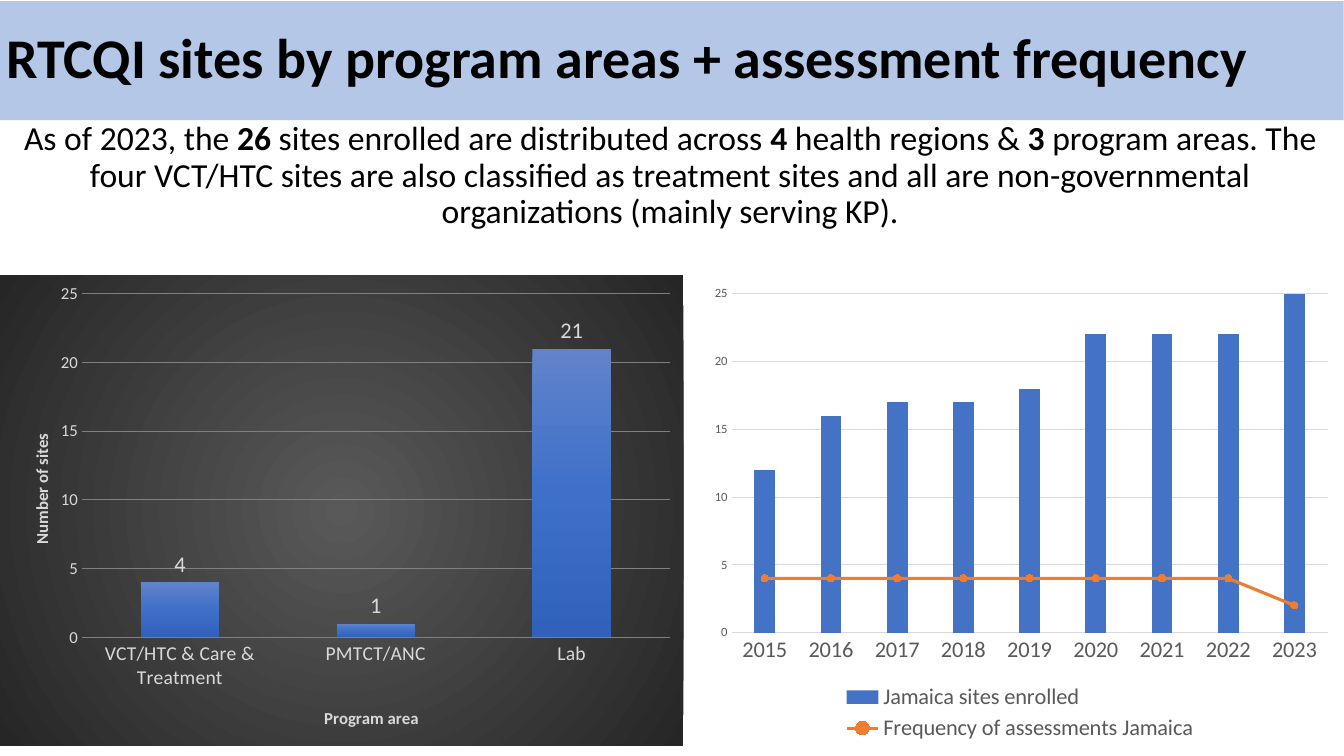
from lxml import etree
from pptx import Presentation
from pptx.chart.data import CategoryChartData
from pptx.dml.color import RGBColor
from pptx.enum import chart as ch, text as tx
from pptx.oxml import parse_xml
from pptx.oxml.ns import nsdecls, qn
from pptx.util import Cm, Pt

HUES = {"band": "B4C7E7", "ink": "000000", "pale": "D9D9D9", "grid": "808080",
        "gray": "595959", "dark": "262626", "blue": "4472C4", "orange": "ED7D31",
        "top": "6183CB", "mid": "3E70CA", "low": "3062BB"}
RGB = {name: RGBColor.from_string(hue) for name, hue in HUES.items()}


def blend(stops, shade):
    marks = "".join(f'<a:gs pos="{pos * 1000}"><a:srgbClr val="{HUES[name]}"/></a:gs>'
                    for pos, name in stops)
    return parse_xml(f'<a:gradFill {nsdecls("a")} rotWithShape="1"><a:gsLst>{marks}</a:gsLst>'
                     f'{shade}</a:gradFill>')


def place(part, index, **spots):
    for old in part.findall(qn("c:layout")):
        part.remove(old)
    modes = '<c:layoutTarget val="inner"/>' if part.tag == qn("c:plotArea") else ""
    modes += '<c:xMode val="edge"/><c:yMode val="edge"/>'
    sizes = "".join(f'<c:{key} val="{val}"/>' for key, val in spots.items())
    part.insert(index, parse_xml(f'<c:layout {nsdecls("c")}><c:manualLayout>{modes}{sizes}'
                                 '</c:manualLayout></c:layout>'))


deck = Presentation()
deck.slide_width, deck.slide_height = Cm(33.87), Cm(19.05)
slide = deck.slides.add_slide(deck.slide_layouts[5])

title = slide.shapes.title
title.left, title.top, title.width, title.height = Cm(-0.1), Cm(0.03), Cm(33.96), Cm(3)
title.fill.solid()
title.fill.fore_color.rgb = RGB["band"]
title.text_frame.text = "RTCQI sites by program areas + assessment frequency"
title.text_frame.vertical_anchor = tx.MSO_ANCHOR.MIDDLE
head = title.text_frame.paragraphs[0]
head.alignment = tx.PP_ALIGN.LEFT
head.line_spacing = 0.9
font = head.runs[0].font
font.name, font.size, font.bold = "Calibri", Pt(40), True
font.color.rgb = RGB["ink"]

frame = slide.shapes.add_textbox(0, Cm(3), Cm(33.78), Cm(2.94)).text_frame
frame.word_wrap = True
frame.vertical_anchor = tx.MSO_ANCHOR.BOTTOM
para = frame.paragraphs[0]
para.alignment = tx.PP_ALIGN.CENTER
para.line_spacing = 0.9
words = ["As of 2023, the ", "26", " sites enrolled are distributed across ", "4",
         " health regions & ", "3",
         " program areas. The four VCT/HTC sites are also classified as treatment sites "
         "and all are non-governmental organizations (mainly serving KP)."]
for i, word in enumerate(words):
    run = para.add_run()
    run.text = word
    run.font.name, run.font.size, run.font.bold = "Calibri", Pt(24), i % 2 == 1
    run.font.color.rgb = RGB["ink"]

areas = (["VCT/HTC & Care & Treatment", "PMTCT/ANC", "Lab"], {"Series 1": [4, 1, 21]})
years = ([str(year) for year in range(2015, 2024)],
         {"Jamaica sites enrolled": [12, 16, 17, 17, 18, 22, 22, 22, 26],
          "Frequency of assessments Jamaica": [4] * 8 + [2]})
plans = [(areas, 0, 17.22, 150, "pale", 14, 12, "grid", (0.12, 0.04, 0.86, 0.73)),
         (years, 17.63, 16.15, 219, "gray", 16, 9, "pale", (0.05, 0.04, 0.93, 0.72))]
charts = []
for (cats, rows), left, width, gap, hue, big, small, grid, spot in plans:
    data = CategoryChartData()
    data.categories = cats
    for name, vals in rows.items():
        data.add_series(name, vals)
    chart = slide.shapes.add_chart(ch.XL_CHART_TYPE.COLUMN_CLUSTERED, Cm(left), Cm(6.93),
                                   Cm(width), Cm(11.86), data).chart
    chart.has_title = chart.has_legend = False
    chart.font.name, chart.font.size = "Calibri", Pt(10)
    plot = chart.plots[0]
    plot.gap_width, plot.vary_by_categories = gap, False
    for axis, size in ((chart.category_axis, big), (chart.value_axis, small)):
        axis.major_tick_mark = axis.minor_tick_mark = ch.XL_TICK_MARK.NONE
        axis.format.line.fill.background()
        font = axis.tick_labels.font
        font.name, font.size = "Calibri", Pt(size)
        font.color.rgb = RGB[hue]
    value = chart.value_axis
    value.minimum_scale, value.maximum_scale, value.major_unit = 0, 25, 5
    value.major_gridlines.format.line.color.rgb = RGB[grid]
    value.major_gridlines.format.line.width = Pt(0.75)
    place(chart._chartSpace.chart.plotArea, 0, **dict(zip("xywh", spot)))
    charts.append(chart)

sites, trend = charts
for axis, name, x, y in ((sites.category_axis, "Program area", 0.47, 0.91),
                         (sites.value_axis, "Number of sites", 0.04, 0.33)):
    label = axis.axis_title
    label.text_frame.text = name
    font = label.text_frame.paragraphs[0].runs[0].font
    font.name, font.size, font.bold = "Calibri", Pt(12), True
    font.color.rgb = RGB["pale"]
    place(label._element, 1, x=x, y=y)
bars = sites.plots[0].series[0]
bars._element.get_or_add_spPr().append(
    blend([(0, "top"), (50, "mid"), (100, "low")], '<a:lin ang="5400000" scaled="0"/>'))
tags = bars.data_labels
tags.show_value = True
tags.position = ch.XL_LABEL_POSITION.OUTSIDE_END
tags.font.name, tags.font.size = "Calibri", Pt(16)
tags.font.color.rgb = RGB["pale"]
back = parse_xml(f'<c:spPr {nsdecls("c", "a")}><a:ln><a:noFill/></a:ln></c:spPr>')
back.insert(0, blend([(0, "gray"), (100, "dark")], '<a:path path="circle">'
                     '<a:fillToRect l="50000" t="50000" r="50000" b="50000"/></a:path>'))
sites._chartSpace.chart.addnext(back)

base = trend.category_axis.format.line
base.color.rgb = RGB["pale"]
base.width = Pt(0.75)
enrolled, rate = trend.plots[0].series
enrolled.format.fill.solid()
enrolled.format.fill.fore_color.rgb = RGB["blue"]
column = trend._chartSpace.chart.plotArea.find(qn("c:barChart"))
lines = parse_xml(f'<c:lineChart {nsdecls("c")}><c:grouping val="stacked"/>'
                  '<c:varyColors val="0"/></c:lineChart>')
column.addnext(lines)
ser = rate._element
lines.append(ser)
for flag in ser.findall(qn("c:invertIfNegative")):
    ser.remove(flag)
etree.SubElement(lines, qn("c:marker")).set("val", "1")
for ref in column.findall(qn("c:axId")):
    etree.SubElement(lines, qn("c:axId")).set("val", ref.get("val"))
rate = trend.plots[1].series[0]
rate.smooth = False
rate.format.line.color.rgb = RGB["orange"]
rate.format.line.width = Pt(2.25)
rate.marker.style, rate.marker.size = ch.XL_MARKER_STYLE.CIRCLE, 5
rate.marker.format.fill.solid()
rate.marker.format.fill.fore_color.rgb = RGB["orange"]
rate.marker.format.line.color.rgb = RGB["orange"]

trend.has_legend = True
key = trend.legend
key.position, key.include_in_layout = ch.XL_LEGEND_POSITION.BOTTOM, False
key.font.name, key.font.size = "Calibri", Pt(16)
key.font.color.rgb = RGB["gray"]
place(key._element, 1, x=0.22, y=0.86, w=0.56, h=0.14)

deck.save("out.pptx")
